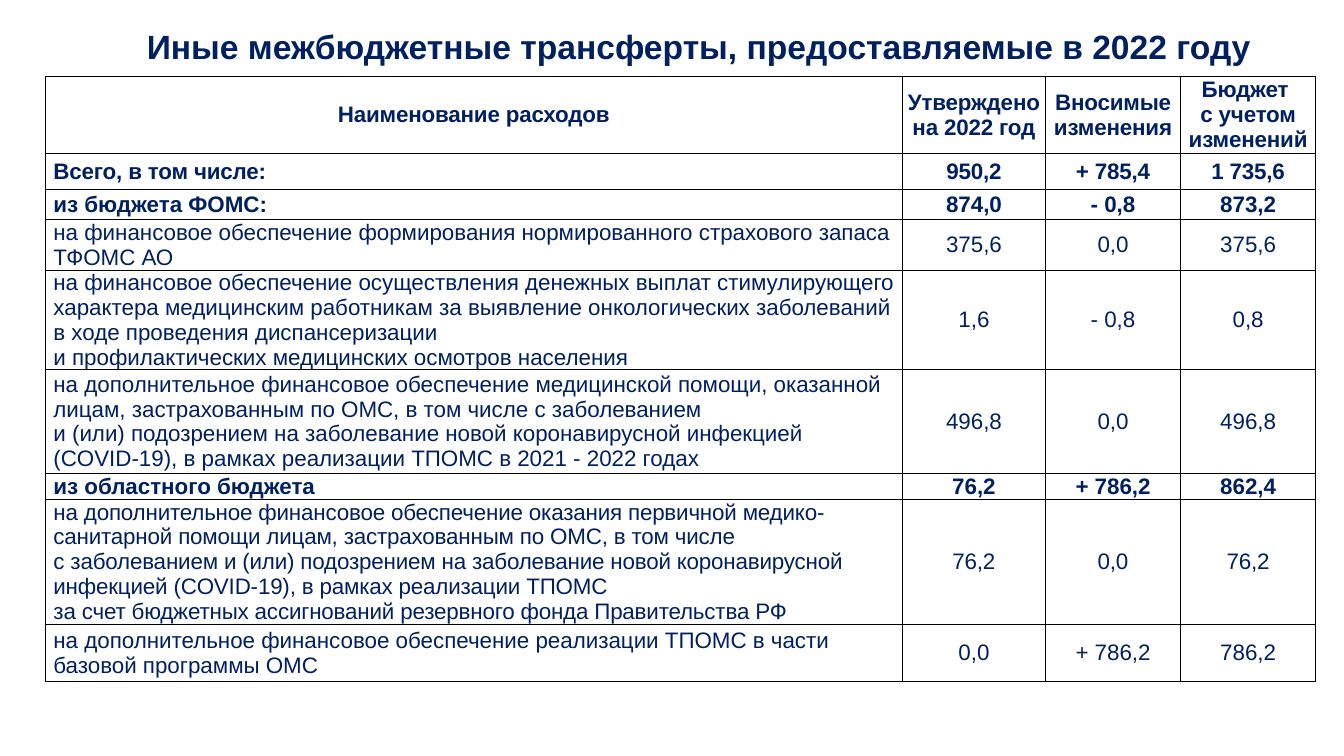
from lxml import etree
from pptx import Presentation
from pptx.dml.color import RGBColor
from pptx.enum.text import MSO_ANCHOR, PP_ALIGN
from pptx.oxml.ns import qn
from pptx.util import Inches, Pt

CENTER, LEFT = PP_ALIGN.CENTER, PP_ALIGN.LEFT
MIDDLE = MSO_ANCHOR.MIDDLE
COLORS = {"navy": "002060", "border": "000000"}
FONT = "Arial"
SLIDE_SIZE = (13.33, 7.5)
TITLE_BOX = (1, 0.22, 11.86, 0.47)
TABLE_BOX = (0.45, 0.76, 12.6, 6)
COLUMN_PARTS = (8.5, 1.42, 1.34, 1.34)
ROW_PARTS = (0.76, 0.36, 0.3, 0.5, 0.99, 1.03, 0.26, 1.23, 0.57)
CONDENSED_ROWS = (0, 1, 7)
CONDENSED_SPACING = "-10"

TITLE = "Иные межбюджетные трансферты, предоставляемые в 2022 году"
HEADINGS = ("Наименование расходов", "Утверждено\n\nна 2022 год",
            "Вносимые изменения", "Бюджет \nс учетом изменений")
EXPENSES = [
    (True, "Всего, в том числе:", "950,2", "+ 785,4", "1 735,6"),
    (True, "из бюджета ФОМС:", "874,0", "- 0,8", "873,2"),
    (False, "на финансовое обеспечение формирования нормированного страхового "
     "запаса ТФОМС АО", "375,6", "0,0", "375,6"),
    (False, "на финансовое обеспечение осуществления денежных выплат "
     "стимулирующего характера медицинским работникам за выявление "
     "онкологических заболеваний в ходе проведения диспансеризации \n"
     "и профилактических медицинских осмотров населения",
     "1,6", "- 0,8", "0,8"),
    (False, "на дополнительное финансовое обеспечение медицинской помощи, "
     "оказанной лицам, застрахованным по ОМС, в том числе с заболеванием \n"
     "и (или) подозрением на заболевание новой коронавирусной инфекцией "
     "(COVID-19), в рамках реализации ТПОМС в 2021 - 2022 годах",
     "496,8", "0,0", "496,8"),
    (True, "из областного бюджета", "76,2", "+ 786,2", "862,4"),
    (False, "на дополнительное финансовое обеспечение оказания первичной "
     "медико-санитарной помощи лицам, застрахованным по ОМС, в том числе \n"
     "с заболеванием и (или) подозрением на заболевание новой коронавирусной "
     "инфекцией (COVID-19), в рамках реализации ТПОМС \n"
     "за счет бюджетных ассигнований резервного фонда Правительства РФ",
     "76,2", "0,0", "76,2"),
    (False, "на дополнительное финансовое обеспечение реализации ТПОМС в части "
     "базовой программы ОМС", "0,0", "+ 786,2", "786,2"),
]


def write_text(frame, text, size, bold, align, condensed=False):
    """Fill a text frame: a double newline starts a paragraph, a single one a line."""
    for paragraph_index, paragraph_text in enumerate(text.split("\n\n")):
        paragraph = frame.add_paragraph() if paragraph_index else frame.paragraphs[0]
        paragraph.alignment = align
        for line_index, line in enumerate(paragraph_text.split("\n")):
            if line_index:
                paragraph.add_line_break()
            run = paragraph.add_run()
            run.text = line
            run.font.name = FONT
            run.font.size = Pt(size)
            run.font.bold = bold
            run.font.color.rgb = RGBColor.from_string(COLORS["navy"])
            if condensed:
                run._r.get_or_add_rPr().set("spc", CONDENSED_SPACING)


def add_borders(cell):
    """Draw a thin line on all four sides of a cell."""
    properties = cell._tc.get_or_add_tcPr()
    for position, side in enumerate(("lnL", "lnR", "lnT", "lnB")):
        border = etree.Element(qn(f"a:{side}"), w=str(Pt(1)))
        fill = etree.SubElement(border, qn("a:solidFill"))
        etree.SubElement(fill, qn("a:srgbClr"), val=COLORS["border"])
        properties.insert(position, border)


def place_title(slide, box):
    """Place the slide title in its box."""
    title = slide.shapes.title
    title.left, title.top, title.width, title.height = map(Inches, box)
    frame = title.text_frame
    frame.word_wrap = True
    frame.vertical_anchor = MIDDLE
    frame.margin_top = frame.margin_bottom = 0
    write_text(frame, TITLE, 24, True, CENTER)


def place_expenses(slide, box):
    """Place the table of transfers in its box."""
    left, top, width, height = map(Inches, box)
    records = [(True, *HEADINGS), *EXPENSES]
    table = slide.shapes.add_table(
        len(records), len(HEADINGS), left, top, width, height).table
    for column, part in zip(table.columns, COLUMN_PARTS):
        column.width = int(width * part / sum(COLUMN_PARTS))
    for row, part in zip(table.rows, ROW_PARTS):
        row.height = int(height * part / sum(ROW_PARTS))
    for row_index, (bold, *texts) in enumerate(records):
        condensed = row_index in CONDENSED_ROWS
        for column_index, text in enumerate(texts):
            cell = table.cell(row_index, column_index)
            cell.fill.background()
            add_borders(cell)
            cell.vertical_anchor = MIDDLE
            cell.margin_left = cell.margin_right = Inches(0.04 if column_index else 0.08)
            cell.margin_top = cell.margin_bottom = 0
            align = CENTER if column_index or row_index == 0 else LEFT
            write_text(cell.text_frame, text, 16, bold, align, condensed)


def main():
    """Build the slide and save it."""
    presentation = Presentation()
    presentation.slide_width, presentation.slide_height = map(Inches, SLIDE_SIZE)
    slide = presentation.slides.add_slide(presentation.slide_layouts[5])
    place_title(slide, TITLE_BOX)
    place_expenses(slide, TABLE_BOX)
    presentation.save("out.pptx")


if __name__ == "__main__":
    main()
